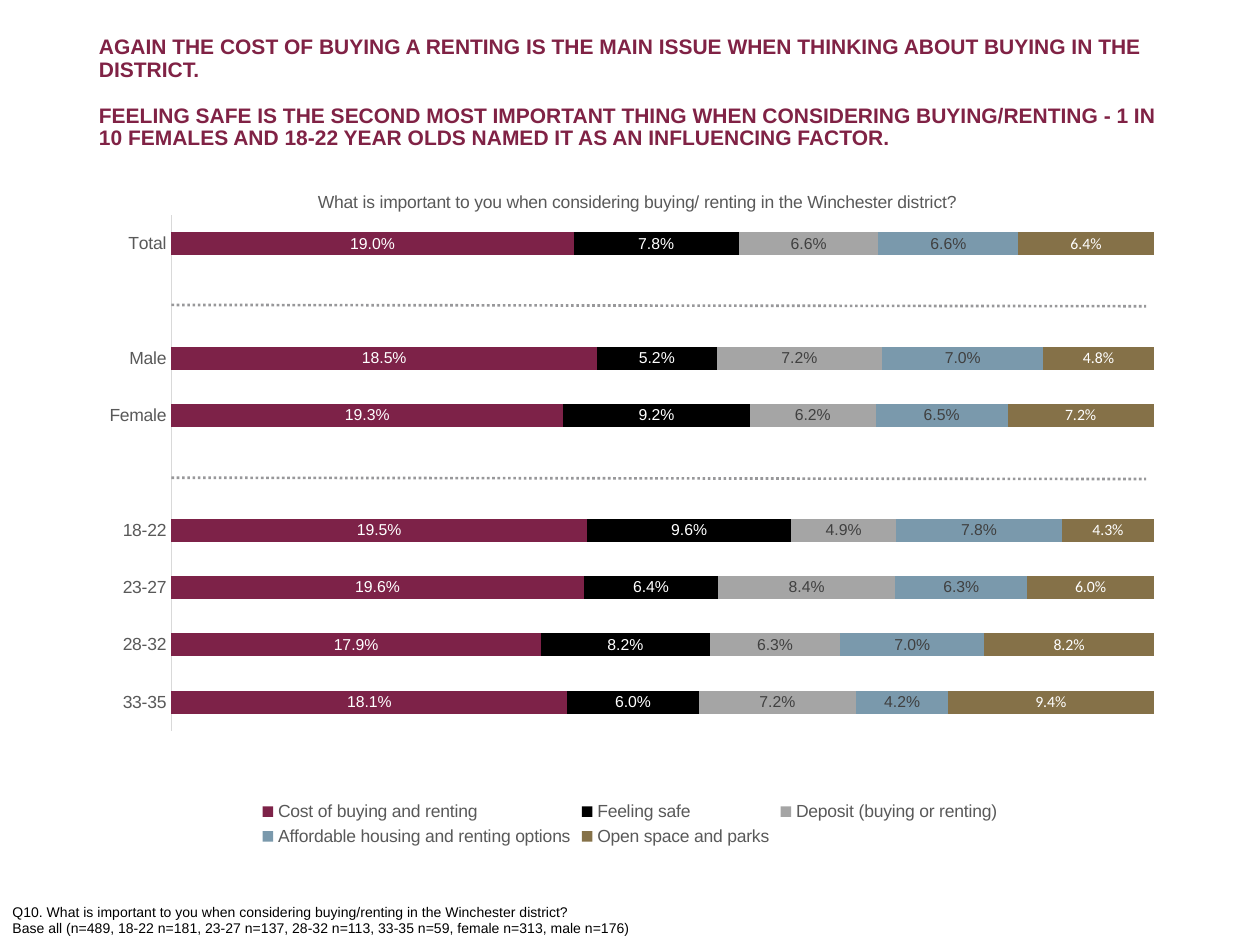
from lxml import etree
from pptx import Presentation
from pptx.chart.data import CategoryChartData
from pptx.dml.color import RGBColor
from pptx.enum import chart as ch, dml, shapes
from pptx.oxml import parse_xml
from pptx.oxml.ns import nsdecls, qn
from pptx.util import Pt


def color(value):
    return RGBColor.from_string(value)


def add_text(text, left, top, width, height, size, fill="000000", bold=False,
             wrap=True, line_spacing=1.0, gap=0):
    """Add a text box with one paragraph per line, gap points apart."""
    box = slide.shapes.add_textbox(Pt(left), Pt(top), Pt(width), Pt(height))
    frame = box.text_frame
    frame.word_wrap = wrap
    frame.text = text
    for index, paragraph in enumerate(frame.paragraphs):
        paragraph.line_spacing = line_spacing
        if index:
            paragraph.space_before = Pt(gap)
        font = paragraph.runs[0].font
        font.name, font.size, font.bold = "Arial", Pt(size), bold
        font.color.rgb = color(fill)


presentation = Presentation()
presentation.slide_width, presentation.slide_height = Pt(720), Pt(540)
slide = presentation.slides.add_slide(presentation.slide_layouts[6])

add_text(
    "AGAIN THE COST OF BUYING A RENTING IS THE MAIN ISSUE WHEN THINKING ABOUT "
    "BUYING IN THE DISTRICT.\n"
    "FEELING SAFE IS THE SECOND MOST IMPORTANT THING WHEN CONSIDERING "
    "BUYING/RENTING - 1 IN 10 FEMALES AND 18-22 YEAR OLDS NAMED IT AS AN "
    "INFLUENCING FACTOR.",
    49.5, 17.5, 621, 46, size=12, fill="802245", bold=True,
    line_spacing=0.9, gap=13)
add_text(
    "Q10. What is important to you when considering buying/renting in the "
    "Winchester district?\n"
    "Base all (n=489, 18-22 n=181, 23-27 n=137, 28-32 n=113, 33-35 n=59, "
    "female n=313, male n=176)",
    0, 512.5, 372, 27, size=8, wrap=False)

# Bars run from the bottom up; the empty categories separate the groups
categories = ["33-35", "28-32", "23-27", "18-22", "", "Female", "Male", "", "Total"]
series_rows = [
    ("Cost of buying and renting", "7D2248", "FFFFFF", "Arial",
     [0.181, 0.179, 0.196, 0.195, None, 0.193, 0.185, None, 0.19]),
    ("Feeling safe", "000000", "FFFFFF", "Arial",
     [0.06, 0.082, 0.064, 0.096, None, 0.092, 0.052, None, 0.078]),
    ("Deposit (buying or renting)", "A5A5A5", "404040", "Arial",
     [0.072, 0.063, 0.084, 0.049, None, 0.062, 0.072, None, 0.066]),
    ("Affordable housing and renting options", "7A99AC", "404040", "Arial",
     [0.042, 0.07, 0.063, 0.078, None, 0.065, 0.07, None, 0.066]),
    ("Open space and parks", "857148", "FFFFFF", "Calibri",
     [0.094, 0.082, 0.06, 0.043, None, 0.072, 0.048, None, 0.064]),
]
chart_data = CategoryChartData(number_format="0.0%")
chart_data.categories = categories
for name, _, _, _, values in series_rows:
    chart_data.add_series(name, values)
chart = slide.shapes.add_chart(
    ch.XL_CHART_TYPE.BAR_STACKED_100, Pt(49.5), Pt(93.5), Pt(621), Pt(393),
    chart_data).chart
chart.font.name, chart.font.size = "Calibri", Pt(10)

chart.has_title = True
chart.chart_title.text_frame.text = (
    "What is important to you when considering buying/ renting in the "
    "Winchester district?")
chart.has_legend = True
chart.legend.position = ch.XL_LEGEND_POSITION.BOTTOM
chart.legend.include_in_layout = False

category_axis, value_axis = chart.category_axis, chart.value_axis
category_axis.major_tick_mark = ch.XL_TICK_MARK.NONE
category_axis.format.line.color.rgb = color("D9D9D9")
category_axis.format.line.width = Pt(0.75)
value_axis.has_major_gridlines = False
value_axis.maximum_scale = 1
value_axis.visible = False

title_font = chart.chart_title.text_frame.paragraphs[0].runs[0].font
title_font.bold = False
for font in (title_font, chart.legend.font, category_axis.tick_labels.font):
    font.name, font.size = "Arial", Pt(10)
    font.color.rgb = color("595959")

plot = chart.plots[0]
plot.gap_width, plot.overlap = 150, 100
plot.vary_by_categories = False
for series, (_, fill, label_color, label_font, _) in zip(plot.series, series_rows):
    series.format.fill.solid()
    series.format.fill.fore_color.rgb = color(fill)
    labels = series.data_labels
    labels.show_value = True
    labels.position = ch.XL_LABEL_POSITION.CENTER
    labels.number_format, labels.number_format_is_linked = "0.0%", False
    labels.font.name, labels.font.size = label_font, Pt(9)
    labels.font.color.rgb = color(label_color)

# Fixed places, as fractions of the chart, for the title and the plot area
layouts = [
    (chart.chart_title._element, '<c:xMode val="edge"/><c:yMode val="edge"/>'
     '<c:x val="0.21"/><c:y val="0.035"/>'),
    (chart._chartSpace.chart.plotArea, '<c:layoutTarget val="inner"/>'
     '<c:xMode val="edge"/><c:yMode val="edge"/><c:x val="0.078"/>'
     '<c:y val="0.075"/><c:w val="0.904"/><c:h val="0.75"/>'),
]
for parent, settings in layouts:
    for old_layout in parent.findall(qn("c:layout")):
        parent.remove(old_layout)
    layout = parse_xml(f'<c:layout {nsdecls("c")}><c:manualLayout>{settings}'
                       '</c:manualLayout></c:layout>')
    text = parent.find(qn("c:tx"))
    parent.insert(0 if text is None else 1, layout)

for top in (174.25, 273):
    divider = slide.shapes.add_connector(
        shapes.MSO_CONNECTOR.STRAIGHT, Pt(98), Pt(top), Pt(655), Pt(top + 0.75))
    divider.line.color.rgb = color("98989A")
    divider.line.width = Pt(1.5)
    divider.line.dash_style = dml.MSO_LINE.ROUND_DOT
    etree.SubElement(divider._element.spPr, qn("a:effectLst"))

presentation.save("out.pptx")
